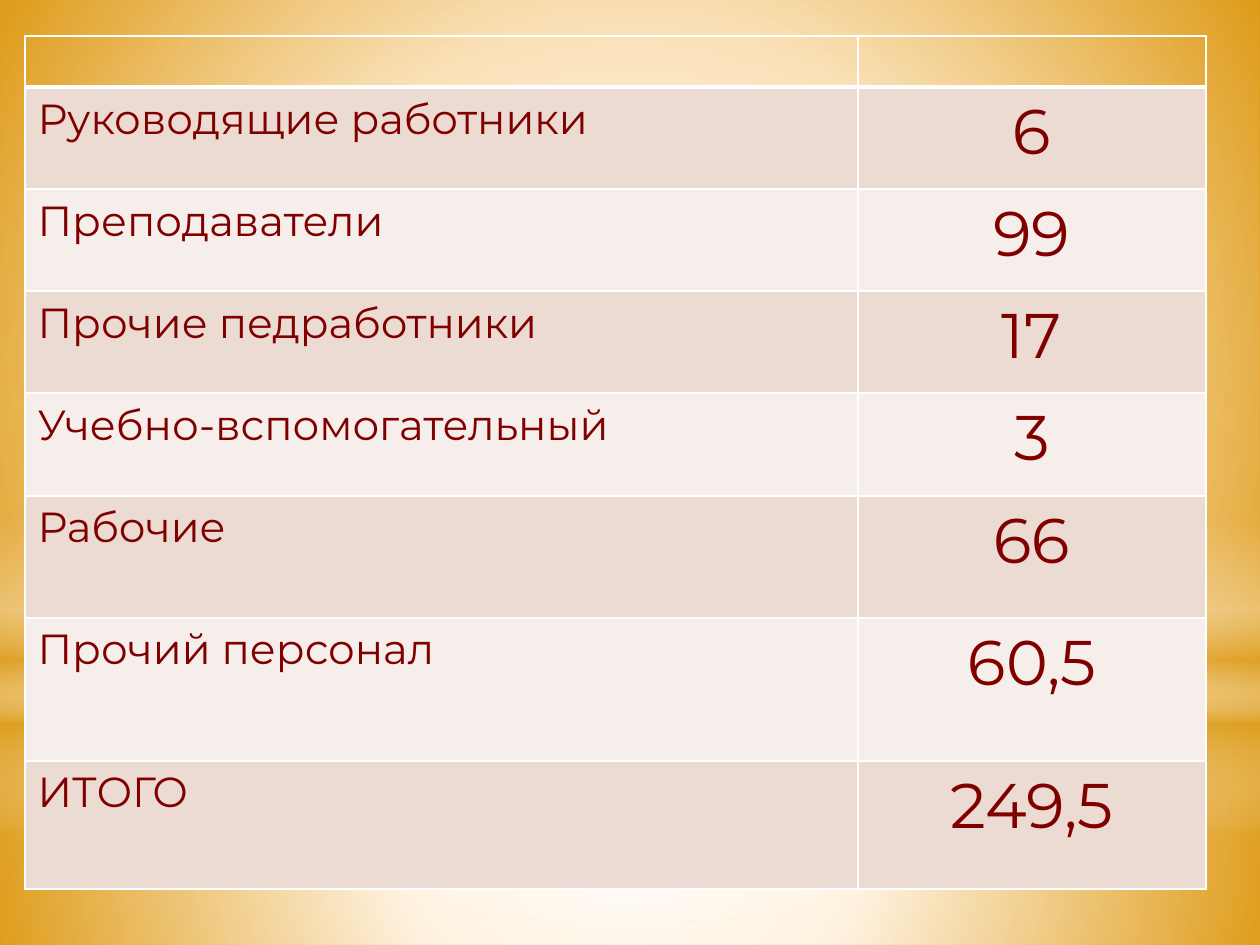
from dataclasses import dataclass
from itertools import product

from lxml.etree import SubElement
from pptx import Presentation
from pptx.dml.color import RGBColor
from pptx.enum.shapes import MSO_SHAPE as Shape
from pptx.enum.text import PP_ALIGN as Align
from pptx.oxml import parse_xml
from pptx.oxml.ns import nsdecls, qn
from pptx.util import Pt

PX = 914400 // 126
SLIDE_SIZE = (1260, 945)


@dataclass(frozen=True)
class Theme:
    font: str = "Montserrat"
    text: str = "800000"
    bands: tuple = ("ECDBD2", "F6EEEA")
    border: str = "FFFFFF"
    white: str = "FFFFFF"
    gold: str = "DC9E1F"
    label_size: int = 24
    number_size: int = 36
    thin: int = 1
    thick: int = 3


THEME = Theme()
WHITE, GOLD = THEME.white, THEME.gold
CENTRE = (50, 50, 50, 50)

STAFF = [
    ("Руководящие работники", "6"),
    ("Преподаватели", "99"),
    ("Прочие педработники", "17"),
    ("Учебно-вспомогательный", "3"),
    ("Рабочие", "66"),
    ("Прочий персонал", "60,5"),
    ("ИТОГО", "249,5"),
]
TABLE_LEFT, TABLE_TOP = 25, 36
COLUMN_WIDTHS = [833, 348]
ROW_HEIGHTS = [51, 102, 102, 102, 103, 122, 143, 128]

# Gradient stops: position %, colour, opacity %
BACKGROUND_STOPS = [(0, "FFF4E3", 100), (42, "FFCC7E", 100), (100, "E79200", 100)]
BACKGROUND_FOCUS = (24, 44, 24, 12)

# Shape, box in px, stops, focus rectangle (None for a vertical gradient)
GLOWS = [
    (Shape.RECTANGLE, (0, 703, 1260, 242),
     [(0, WHITE, 91), (37, WHITE, 76), (100, GOLD, 79)], CENTRE),
    (Shape.RECTANGLE, (0, 0, 1260, 703),
     [(0, WHITE, 89), (48, WHITE, 62), (100, GOLD, 79)], CENTRE),
    (Shape.RECTANGLE, (0, 519, 1260, 315),
     [(0, WHITE, 0), (29, WHITE, 30), (45, GOLD, 40),
      (55, WHITE, 26), (65, GOLD, 60), (100, WHITE, 0)], None),
    (Shape.OVAL, (0, 220, 1260, 703),
     [(0, WHITE, 100), (56, WHITE, 0)], CENTRE),
]


def set_gradient(fill, properties, stops, focus):
    """Give the fill held by the properties element a gradient."""
    fill.solid()
    gradient = parse_xml(f'<a:gradFill {nsdecls("a")} rotWithShape="1"><a:gsLst/></a:gradFill>')
    for position, colour, opacity in stops:
        stop = SubElement(gradient[0], qn("a:gs"), pos=str(position * 1000))
        rgb = SubElement(stop, qn("a:srgbClr"), val=colour)
        if opacity < 100:
            SubElement(rgb, qn("a:alpha"), val=str(opacity * 1000))
    if focus:
        circle = SubElement(gradient, qn("a:path"), {"path": "circle"})
        edges = {side: str(value * 1000) for side, value in zip("ltrb", focus)}
        SubElement(circle, qn("a:fillToRect"), edges)
    else:
        SubElement(gradient, qn("a:lin"), ang=str(90 * 60000), scaled="0")
    properties.replace(properties.find(qn("a:solidFill")), gradient)


def set_borders(cell, top, bottom):
    widths = {"L": THEME.thin, "R": THEME.thin, "T": top, "B": bottom}
    properties = cell._tc.get_or_add_tcPr()
    for index, (side, width) in enumerate(widths.items()):
        properties.insert(index, parse_xml(
            f'<a:ln{side} {nsdecls("a")} w="{Pt(width)}"><a:solidFill>'
            f'<a:srgbClr val="{THEME.border}"/></a:solidFill></a:ln{side}>'))


def write(cell, text, size, alignment):
    paragraph = cell.text_frame.paragraphs[0]
    paragraph.alignment = alignment
    run = paragraph.add_run()
    run.text = text
    run.font.name = THEME.font
    run.font.size = Pt(size)
    run.font.color.rgb = RGBColor.from_string(THEME.text)


def add_background(slide):
    fill = slide.background.fill
    fill.solid()
    properties = slide.element.find(".//" + qn("p:bgPr"))
    set_gradient(fill, properties, BACKGROUND_STOPS, BACKGROUND_FOCUS)
    for kind, box, stops, focus in GLOWS:
        shape = slide.shapes.add_shape(kind, *(value * PX for value in box))
        shape.shadow.inherit = False
        shape.line.fill.background()
        set_gradient(shape.fill, shape.element.spPr, stops, focus)


def add_staff_table(slide):
    table = slide.shapes.add_table(
        len(ROW_HEIGHTS), len(COLUMN_WIDTHS), TABLE_LEFT * PX, TABLE_TOP * PX,
        sum(COLUMN_WIDTHS) * PX, sum(ROW_HEIGHTS) * PX).table
    table.first_row = table.horz_banding = False
    for column, width in zip(table.columns, COLUMN_WIDTHS):
        column.width = width * PX
    for row, height in zip(table.rows, ROW_HEIGHTS):
        row.height = height * PX

    styles = [(THEME.label_size, Align.LEFT), (THEME.number_size, Align.CENTER)]
    for row, column in product(range(len(ROW_HEIGHTS)), range(len(COLUMN_WIDTHS))):
        cell = table.cell(row, column)
        if row == 0:
            cell.margin_top = cell.margin_bottom = 0
            cell.fill.background()
        else:
            cell.fill.solid()
            cell.fill.fore_color.rgb = RGBColor.from_string(THEME.bands[(row - 1) % 2])
            write(cell, STAFF[row - 1][column], *styles[column])
        set_borders(cell,
                    top=THEME.thick if row == 1 else THEME.thin,
                    bottom=THEME.thick if row == 0 else THEME.thin)


def main():
    presentation = Presentation()
    presentation.slide_width, presentation.slide_height = (side * PX for side in SLIDE_SIZE)
    slide = presentation.slides.add_slide(presentation.slide_layouts[6])
    add_background(slide)
    add_staff_table(slide)
    presentation.save("out.pptx")


if __name__ == "__main__":
    main()
